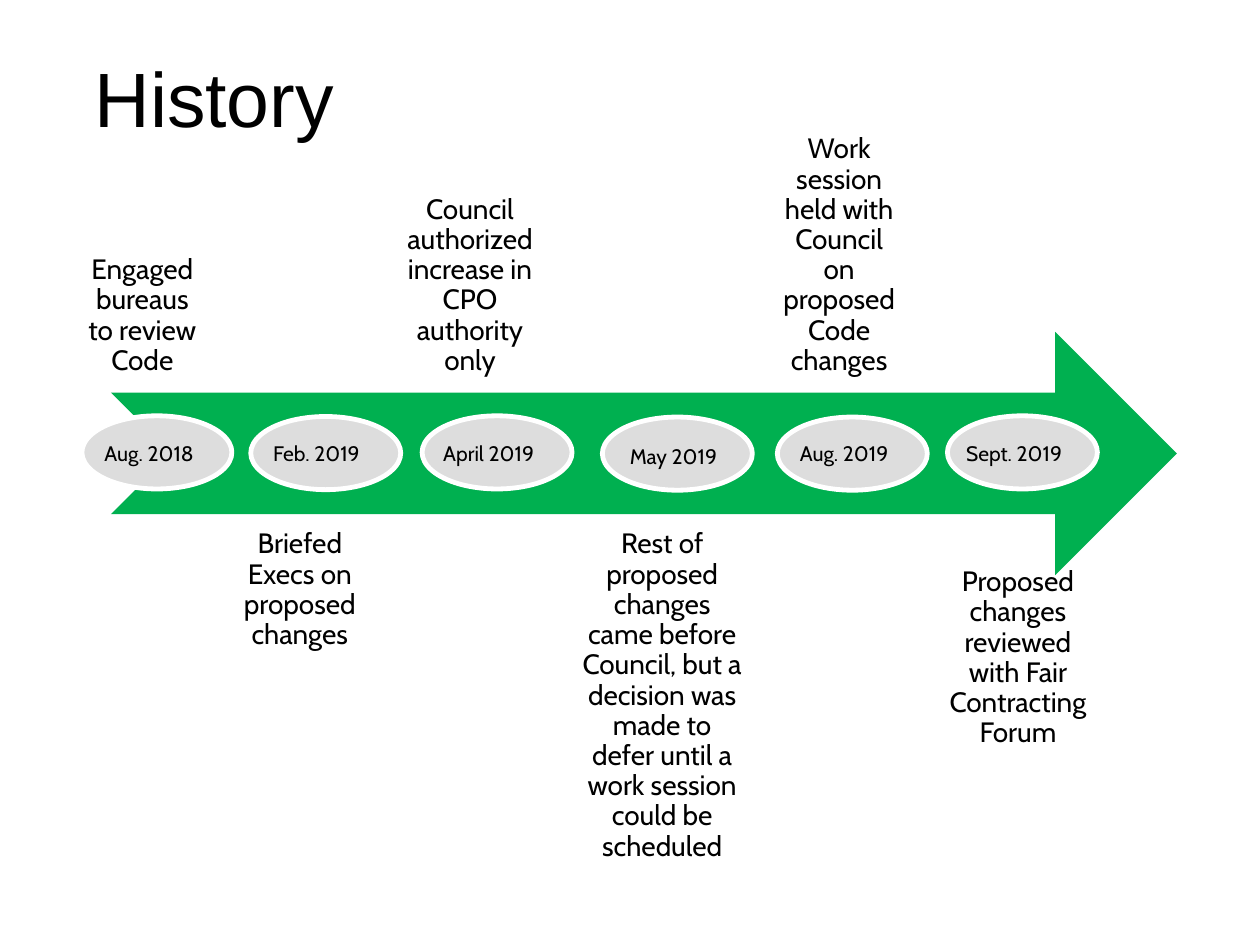
from dataclasses import dataclass

from pptx import Presentation
from pptx import util as u
from pptx.dml.color import RGBColor
from pptx.enum import shapes, text

COLORS = {"arrow": "00B050", "marker": "DDDDDD", "outline": "FFFFFF", "text": "000000"}
MARKER_W, MARKER_H = 85.7, 41.8
DATE_W, DATE_H = 92.9, 21.6
ABOVE_TOP, ABOVE_H = 85, 139


@dataclass
class Milestone:
    date: str
    note: str
    note_x: float
    note_w: float
    marker_x: float
    date_x: float
    above: bool = False
    note_y: float = 293.8
    note_h: float = 139
    marker_y: float = 238
    date_y: float = 248.4


MILESTONES = [
    Milestone("Aug. 2018", "Engaged bureaus to review Code", 40.3, 82.1, 46.8, 52.6, above=True,
              marker_y=237.6),
    Milestone("Feb. 2019", "Briefed Execs on proposed changes", 130.3, 82.1, 143.3, 149),
    Milestone("April 2019", "Council authorized increase in CPO authority only",
              218.2, 100.8, 241.2, 246.2, above=True, marker_y=237.6),
    Milestone("May 2019", "Rest of proposed changes came before Council, but a decision was made "
              "to defer until a work session could be scheduled",
              323.3, 110.2, 344.2, 352.8, marker_y=238.3, date_y=249.8),
    Milestone("Aug. 2019", "Work session held with Council on proposed Code changes",
              438.5, 82.1, 444.2, 450, above=True, marker_y=238.3),
    Milestone("Sept. 2019", "Proposed changes reviewed with Fair Contracting Forum",
              527, 109.4, 541.4, 545, note_y=315.4, note_h=110.2, marker_y=237.6),
]


def write(sp, content: str, *, size: float, font: str = "Cabin",
          align=text.PP_ALIGN.LEFT, anchor=text.MSO_ANCHOR.TOP,
          spacing: float = 1.0, inset: float | None = None) -> None:
    tf = sp.text_frame
    tf.word_wrap = True
    tf.vertical_anchor = anchor
    if inset is not None:
        tf.margin_left = tf.margin_right = tf.margin_top = tf.margin_bottom = u.Pt(inset)
    p = tf.paragraphs[0]
    p.alignment = align
    p.line_spacing = spacing
    r = p.add_run()
    r.text = content
    r.font.name = font
    r.font.size = u.Pt(size)
    r.font.color.rgb = RGBColor.from_string(COLORS["text"])


def box(*lengths: float) -> list[u.Length]:
    return [u.Pt(v) for v in lengths]


def add_preset(s, kind, fill: str, *lengths: float):
    sp = s.shapes.add_shape(kind, *box(*lengths))
    sp.shadow.inherit = False
    sp.fill.solid()
    sp.fill.fore_color.rgb = RGBColor.from_string(COLORS[fill])
    sp.line.fill.background()
    return sp


def add_milestone(s, m: Milestone) -> None:
    y, h = (ABOVE_TOP, ABOVE_H) if m.above else (m.note_y, m.note_h)
    note = s.shapes.add_textbox(*box(m.note_x, y, m.note_w, h))
    write(note, m.note, size=16, align=text.PP_ALIGN.CENTER, spacing=0.9, inset=8.96,
          anchor=text.MSO_ANCHOR.BOTTOM if m.above else text.MSO_ANCHOR.TOP)
    marker = add_preset(s, shapes.MSO_SHAPE.OVAL, "marker",
                        m.marker_x, m.marker_y, MARKER_W, MARKER_H)
    marker.line.color.rgb = RGBColor.from_string(COLORS["outline"])
    marker.line.width = u.Pt(2.75)


def add_date(s, m: Milestone) -> None:
    sp = s.shapes.add_textbox(*box(m.date_x, m.date_y, DATE_W, DATE_H))
    write(sp, m.date, size=12)
    sp.text_frame.auto_size = text.MSO_AUTO_SIZE.SHAPE_TO_FIT_TEXT


def main() -> None:
    prs = Presentation()
    prs.slide_width, prs.slide_height = u.Pt(720), u.Pt(540)
    s = prs.slides.add_slide(prs.slide_layouts[5])

    title = s.shapes.title
    title.left, title.top, title.width, title.height = box(46.8, 19.4, 661.7, 78.5)
    write(title, "History", size=44, font="Arial", anchor=text.MSO_ANCHOR.MIDDLE, spacing=0.89)

    add_preset(s, shapes.MSO_SHAPE.NOTCHED_RIGHT_ARROW, "arrow", 63.4, 189.6, 609.1, 139)
    for m in MILESTONES:
        add_milestone(s, m)
    for m in MILESTONES:
        add_date(s, m)

    prs.save("out.pptx")


if __name__ == "__main__":
    main()
